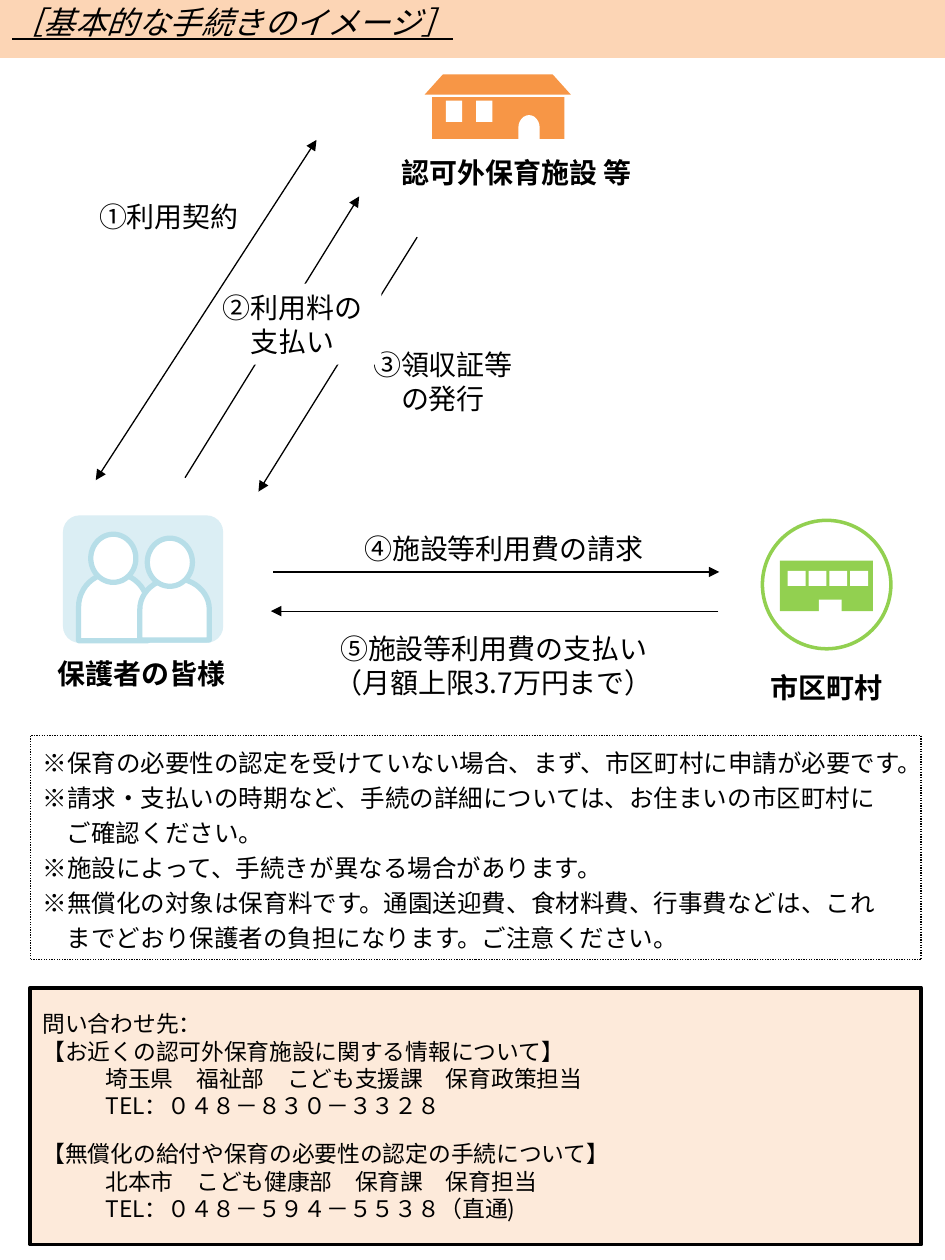
from dataclasses import dataclass

from lxml import etree
from pptx import Presentation
from pptx.dml.color import RGBColor
from pptx.enum.dml import MSO_LINE
from pptx.enum.shapes import MSO_CONNECTOR, MSO_SHAPE
from pptx.enum.text import MSO_ANCHOR, PP_ALIGN
from pptx.oxml.ns import qn
from pptx.util import Cm, Pt

RECT = MSO_SHAPE.RECTANGLE
ROUNDED = MSO_SHAPE.ROUNDED_RECTANGLE
OVAL = MSO_SHAPE.OVAL
DELAY = MSO_SHAPE.FLOWCHART_DELAY
TRAPEZOID = MSO_SHAPE.TRAPEZOID
STRAIGHT = MSO_CONNECTOR.STRAIGHT
DOTTED = MSO_LINE.ROUND_DOT
LEFT, CENTER = PP_ALIGN.LEFT, PP_ALIGN.CENTER
TOP, MIDDLE = MSO_ANCHOR.TOP, MSO_ANCHOR.MIDDLE


@dataclass(frozen=True)
class Theme:
    font: str = "Noto Sans CJK JP"
    ink: str = "000000"
    white: str = "FFFFFF"
    banner: str = "FCD5B5"
    contact: str = "FDEADA"
    nursery: str = "F79646"
    city: str = "92D050"
    family: str = "DBEEF4"
    outline: str = "B7DEE8"
    title: int = 18
    label: int = 16
    note: int = 14
    small: int = 13


theme = Theme()


def draw(shapes, kind, box, fill=None, line=None, width=0.75, turn=0):
    shape = shapes.add_shape(kind, *[Cm(value) for value in box])
    shape.shadow.inherit = False
    shape.rotation = turn
    if fill:
        shape.fill.solid()
        shape.fill.fore_color.rgb = RGBColor.from_string(fill)
    else:
        shape.fill.background()
    if line:
        shape.line.color.rgb = RGBColor.from_string(line)
        shape.line.width = Pt(width)
    else:
        shape.line.fill.background()
    return shape


def write(shape, text, size=theme.label, pitch=19.4, align=CENTER, anchor=TOP,
          indent=0, before=0, bold=False, italic=False, underline=False):
    frame = shape.text_frame
    frame.word_wrap = True
    frame.vertical_anchor = anchor
    for row in text.split("\n"):
        paragraph = frame.paragraphs[0]
        if paragraph.runs:
            paragraph = frame.add_paragraph()
        paragraph.alignment = align
        paragraph.line_spacing = Pt(pitch)
        if before:
            paragraph.space_before = Pt(before)
        if indent:
            paragraph._p.get_or_add_pPr().set("marL", str(Cm(indent)))
        run = paragraph.add_run()
        run.text = row
        run.font.size = Pt(size)
        run.font.name = theme.font
        run.font.bold = bold
        run.font.italic = italic
        run.font.underline = underline
        run.font.color.rgb = RGBColor.from_string(theme.ink)
        east_asian = etree.SubElement(run._r.get_or_add_rPr(), qn("a:ea"))
        east_asian.set("typeface", theme.font)


deck = Presentation()
deck.slide_width, deck.slide_height = Cm(19.05), Cm(25.4)
slide = deck.slides.add_slide(deck.slide_layouts[6])
canvas = slide.shapes

banner = draw(canvas, RECT, (0, -0.1, 19.05, 1.27), theme.banner)
write(banner, "［基本的な手続きのイメージ］", size=theme.title, pitch=16, align=LEFT,
      anchor=MIDDLE, italic=True, underline=True)

contact = draw(canvas, RECT, (0.61, 19.91, 17.96, 5.18), theme.contact, theme.ink, 2.25)
inquiries = [
    ("問い合わせ先：", 0, 0),
    ("【お近くの認可外保育施設に関する情報について】", 0, 0),
    ("埼玉県　福祉部　こども支援課　保育政策担当", 1.27, 0),
    ("TEL：０４８－８３０－３３２８", 1.27, 0),
    ("【無償化の給付や保育の必要性の認定の手続について】", 0, 12),
    ("北本市　こども健康部　保育課　保育担当", 1.27, 0),
    ("TEL：０４８－５９４－５５３８（直通)", 1.27, 0),
]
for text, indent, before in inquiries:
    write(contact, text, size=theme.small, pitch=15.6, align=LEFT, anchor=MIDDLE,
          indent=indent, before=before)

nursery = canvas.add_group_shape().shapes
draw(nursery, RECT, (8.71, 1.96, 2.67, 0.84), theme.nursery)
roof = draw(nursery, TRAPEZOID, (8.56, 1.5, 2.95, 0.41), theme.nursery)
roof.adjustments[0] = 0.9
for column in range(2):
    draw(nursery, RECT, (8.99 + 0.61 * column, 2.03, 0.33, 0.43), theme.white)
draw(nursery, DELAY, (10.41, 2.36, 0.51, 0.43), theme.white, turn=270)

city = canvas.add_group_shape().shapes
draw(city, OVAL, (15.37, 10.49, 2.59, 2.59), theme.white, theme.city, 2)
draw(city, RECT, (15.72, 11.3, 1.88, 1.02), theme.city)
draw(city, RECT, (16.51, 12.09, 0.46, 0.25), theme.white)
for column in range(4):
    draw(city, RECT, (15.88 + 0.42 * column, 11.51, 0.36, 0.3), theme.white)

family = canvas.add_group_shape().shapes
backdrop = draw(family, ROUNDED, (1.27, 10.39, 3.23, 2.57), theme.family)
backdrop.adjustments[0] = 0.13
parents = [
    ((1.6, 11.53, 1.37, 1.4), (1.83, 10.77, 0.91, 0.97)),
    ((2.9, 11.58, 1.24, 1.4), (2.97, 10.85, 0.91, 0.97)),
]
for body, head in parents:
    draw(family, DELAY, body, theme.white, theme.outline, 3, turn=270)
    draw(family, OVAL, head, theme.white, theme.outline, 3)

parties = [
    ("認可外保育施設 等", (7.52, 3, 5.79, 0.94)),
    ("保護者の皆様", (0.33, 13.11, 5.05, 0.89)),
    ("市区町村", (14.76, 13.39, 3.81, 0.94)),
]
for name, box in parties:
    write(canvas.add_textbox(*[Cm(value) for value in box]), name, bold=True)

notes = draw(canvas, RECT, (0.61, 14.83, 17.96, 4.52), line=theme.ink)
notes.line.dash_style = DOTTED
cautions = [
    ("※保育の必要性の認定を受けていない場合、まず、市区町村に申請が必要です。", 0),
    ("※請求・支払いの時期など、手続の詳細については、お住まいの市区町村に", 0),
    ("ご確認ください。", 0.49),
    ("※施設によって、手続きが異なる場合があります。", 0),
    ("※無償化の対象は保育料です。通園送迎費、食材料費、行事費などは、これ", 0),
    ("までどおり保護者の負担になります。ご注意ください。", 0.49),
]
for text, indent in cautions:
    write(notes, text, size=theme.note, pitch=20, align=LEFT, anchor=MIDDLE, indent=indent)

steps = [
    ("④施設等利用費の請求", (6.4, 10.59, 7.52, 0.94), None,
     (5.51, 11.53, 14.5, 11.53), ["tailEnd"]),
    ("⑤施設等利用費の支払い\n（月額上限3.7万円まで）", (5.74, 12.6, 8.43, 1.63), None,
     (14.48, 12.32, 5.46, 12.32), ["tailEnd"]),
    ("③領収証等\nの発行", (7.14, 6.88, 3.58, 1.63), theme.white,
     (8.41, 4.78, 5.21, 9.91), ["tailEnd"]),
    ("②利用料の\n支払い", (4.11, 5.72, 3.58, 1.63), theme.white,
     (3.73, 9.63, 7.24, 3.96), ["tailEnd"]),
    ("①利用契約", (1.65, 3.89, 3.51, 0.94), None,
     (1.93, 9.68, 6.38, 2.82), ["headEnd", "tailEnd"]),
]
for text, box, fill, route, tips in steps:
    arrow = canvas.add_connector(STRAIGHT, *[Cm(value) for value in route])
    arrow.line.color.rgb = RGBColor.from_string(theme.ink)
    arrow.line.width = Pt(0.75)
    for tip in tips:
        etree.SubElement(arrow.line._get_or_add_ln(), qn(f"a:{tip}")).set("type", "triangle")
    etree.SubElement(arrow._element.spPr, qn("a:effectLst"))
    write(draw(canvas, RECT, box, fill), text)

deck.save("out.pptx")
